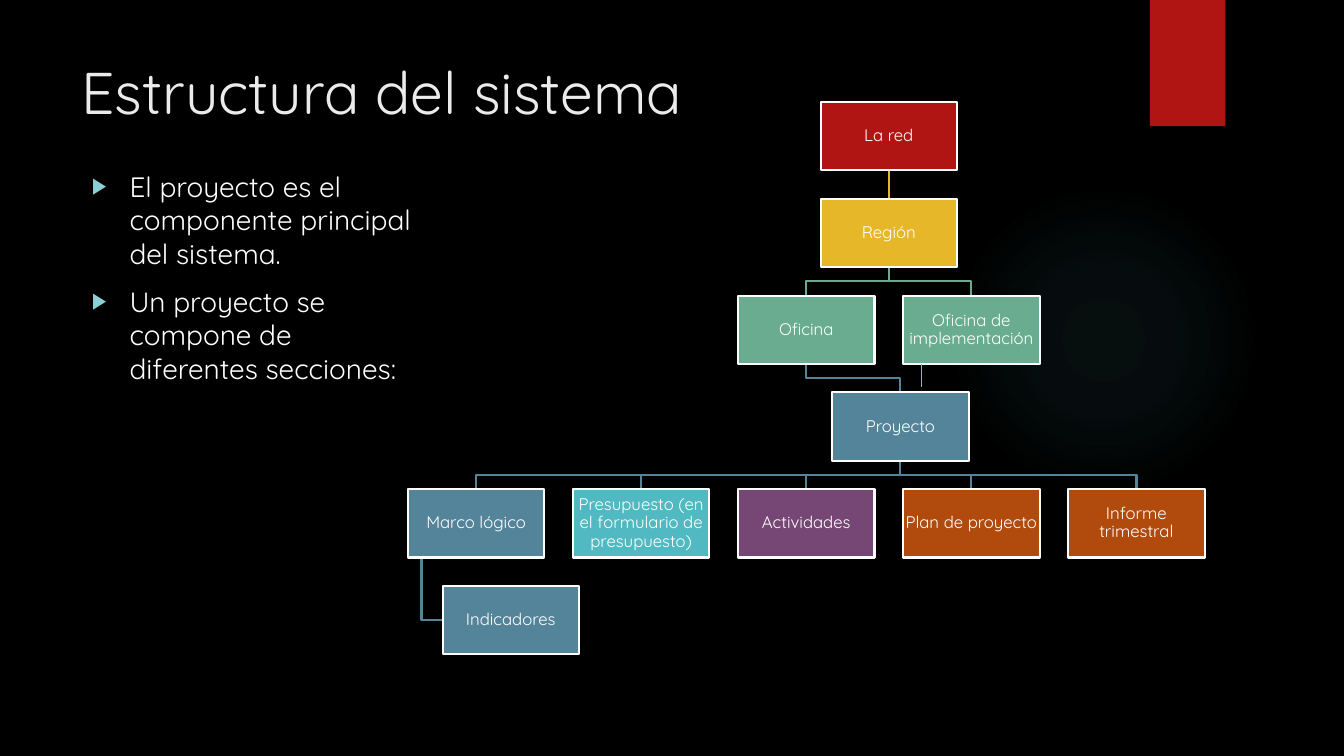
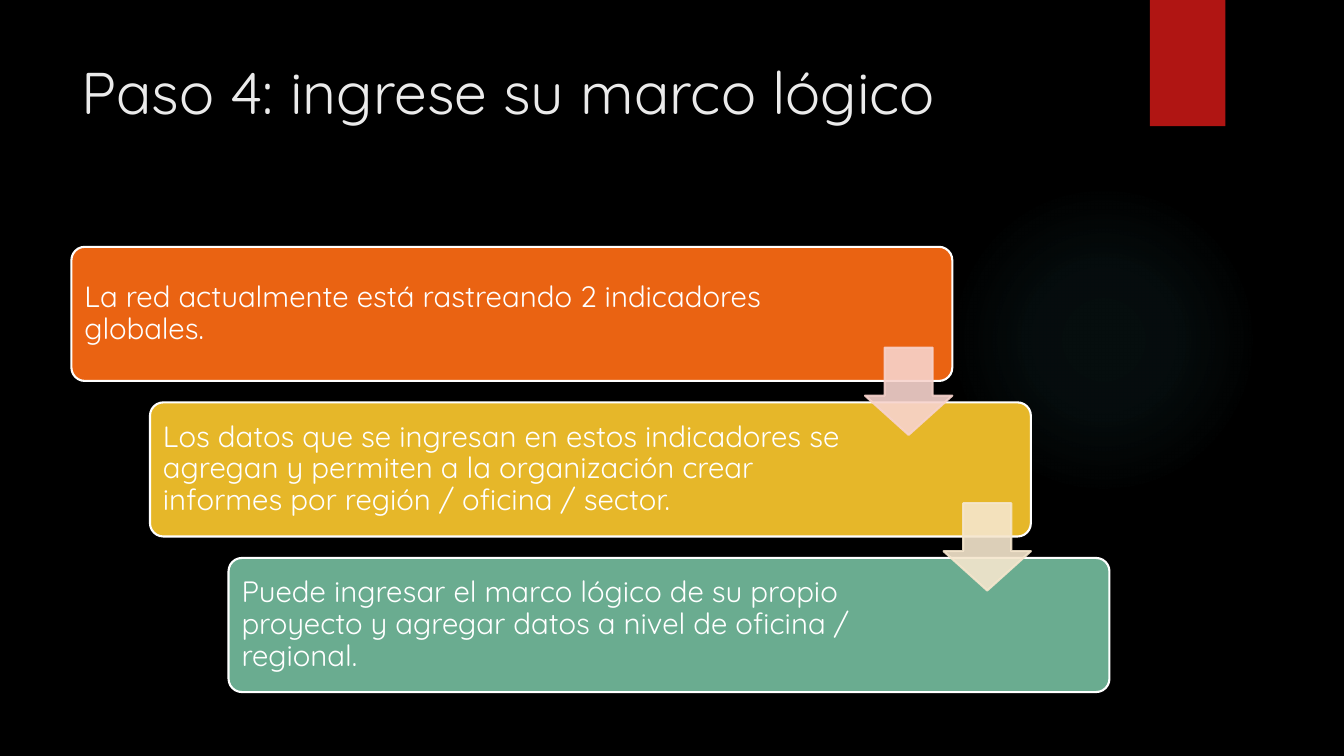
"""Build two slides on the structure of a project system and its logical framework."""
from lxml.etree import SubElement
from pptx import Presentation
from pptx.dml.color import RGBColor
from pptx.enum.shapes import MSO_CONNECTOR as Connector, MSO_SHAPE as Shape
from pptx.enum.text import MSO_ANCHOR as Anchor, MSO_AUTO_SIZE as AutoSize, PP_ALIGN as Align
from pptx.oxml import parse_xml
from pptx.oxml.ns import nsdecls, qn
from pptx.util import Cm, Pt

FONT = "Quicksand"
BLACK = RGBColor(0x00, 0x00, 0x00)
WHITE = RGBColor(0xFF, 0xFF, 0xFF)
TITLE_GREY = RGBColor(0xEB, 0xEB, 0xEB)
RED = RGBColor(0xB0, 0x15, 0x13)
YELLOW = RGBColor(0xE6, 0xB7, 0x29)
GREEN = RGBColor(0x6A, 0xAC, 0x90)
BLUE = RGBColor(0x54, 0x84, 0x9A)
PALE_BLUE = RGBColor(0x95, 0xB6, 0xC5)
TEAL = RGBColor(0x50, 0xB9, 0xC1)
BULLET_TEAL = RGBColor(0x8A, 0xD0, 0xD6)
PURPLE = RGBColor(0x76, 0x46, 0x74)
BROWN = RGBColor(0xB0, 0x4A, 0x0D)
ORANGE = RGBColor(0xEA, 0x63, 0x12)
PINK = RGBColor(0xF7, 0xD3, 0xCC)
CREAM = RGBColor(0xF5, 0xE6, 0xCD)

STRUCTURE_TITLE = "Estructura del sistema"
STRUCTURE_POINTS = [
    "El proyecto es el componente principal del sistema.",
    "Un proyecto se compone de diferentes secciones:",
]
UNITS = [
    ("La red", 2.5, 0, RED, None),
    ("Región", 2.5, 1, YELLOW, "La red"),
    ("Oficina", 2, 2, GREEN, "Región"),
    ("Oficina de implementación", 3, 2, GREEN, "Región"),
    ("Proyecto", 2.57, 3, BLUE, "Oficina"),
    ("Marco lógico", 0, 4, BLUE, "Proyecto"),
    ("Presupuesto (en el formulario de presupuesto)", 1, 4, TEAL, "Proyecto"),
    ("Actividades", 2, 4, PURPLE, "Proyecto"),
    ("Plan de proyecto", 3, 4, BROWN, "Proyecto"),
    ("Informe trimestral", 4, 4, BROWN, "Proyecto"),
    ("Indicadores", 0.21, 5, BLUE, "Marco lógico"),
]
LINK_COLORS = {1: YELLOW, 2: GREEN, 3: BLUE, 4: BLUE, 5: BLUE}
SIDE_LINKED = {"Indicadores"}

STEP_TITLE = "Paso 4: ingrese su marco lógico"
STEPS = [
    ("La red actualmente está rastreando 2 indicadores globales.", ORANGE, PINK),
    ("Los datos que se ingresan en estos indicadores se agregan y permiten a la "
     "organización crear informes por región / oficina / sector.", YELLOW, CREAM),
    ("Puede ingresar el marco lógico de su propio proyecto y agregar datos a nivel "
     "de oficina / regional.", GREEN, None),
]

UNIT_W, UNIT_H = 3.44, 1.72
UNIT_LEFT, UNIT_TOP = 10.28, 2.57
UNIT_DX, UNIT_DY = 4.16, 2.44
STEP_W, STEP_H = 22.2, 3.38
STEP_LEFT, STEP_TOP = 1.8, 6.22
STEP_DX, STEP_DY = 1.98, 3.92
ARROW_SIZE, ARROW_DROP = 2.2, 2.54

FRAME = dict(word_wrap=True, auto_size=AutoSize.NONE)
TOP_FRAME = dict(FRAME, vertical_anchor=Anchor.TOP)
UNIT_FRAME = dict(FRAME, vertical_anchor=Anchor.MIDDLE, margin_left=Cm(0.03),
                  margin_right=Cm(0.03), margin_top=Cm(0.03), margin_bottom=Cm(0.03))
STEP_FRAME = dict(FRAME, vertical_anchor=Anchor.MIDDLE, margin_left=Cm(0.23),
                  margin_right=Cm(4.37), margin_top=Cm(0.23), margin_bottom=Cm(0.23))
UNIT_PARA = dict(alignment=Align.CENTER, line_spacing=0.9)
STEP_PARA = dict(alignment=Align.LEFT, line_spacing=0.9)


def assign(target, values):
    for name, value in values.items():
        setattr(target, name, value)


def cm_box(*lengths):
    return [Cm(length) for length in lengths]


def set_font(paragraph, size, color=WHITE):
    assign(paragraph.font, dict(name=FONT, size=Pt(size), bold=False))
    paragraph.font.color.rgb = color


def set_line(drawn, color, width=1.5):
    drawn.line.color.rgb = color
    drawn.line.width = Pt(width)


def add_figure(slide, preset, box, fill, outline=None):
    figure = slide.shapes.add_shape(preset, *cm_box(*box))
    figure.shadow.inherit = False
    figure.fill.solid()
    figure.fill.fore_color.rgb = fill
    if outline is None:
        figure.line.fill.background()
    else:
        set_line(figure, outline)
    return figure


def write(figure, text, size, frame_values, para_values):
    frame = figure.text_frame
    assign(frame, frame_values)
    frame.text = text
    assign(frame.paragraphs[0], para_values)
    set_font(frame.paragraphs[0], size)


def add_straight(slide, start, end, color, width=1.5):
    line = slide.shapes.add_connector(Connector.STRAIGHT, *cm_box(*start, *end))
    set_line(line, color, width)
    SubElement(line.element.spPr, qn("a:effectLst"))


def add_bent(slide, points, color):
    start, *rest = [cm_box(*point) for point in points]
    builder = slide.shapes.build_freeform(*start)
    builder.add_line_segments(rest, close=False)
    bend = builder.convert_to_shape()
    bend.shadow.inherit = False
    bend.fill.background()
    set_line(bend, color)


def decorate_master(prs, slide):
    master = prs.slide_master
    master.background.fill.solid()
    master.background.fill.fore_color.rgb = BLACK
    glow = add_figure(slide, Shape.OVAL, (23.9, 4.65, 7.82, 7.82), TEAL)
    stops = "".join(
        f'<a:gs pos="{place * 1000}"><a:srgbClr val="{TEAL}">'
        f'<a:alpha val="{alpha * 1000}"/></a:srgbClr></a:gs>'
        for place, alpha in [(0, 7), (36, 6), (69, 0)])
    gradient = parse_xml(
        f'<a:gradFill {nsdecls("a")} rotWithShape="1"><a:gsLst>{stops}</a:gsLst>'
        '<a:path path="circle"><a:fillToRect l="50000" t="50000" r="50000" b="50000"/>'
        '</a:path></a:gradFill>')
    properties = glow.element.spPr
    properties.replace(properties.find(qn("a:solidFill")), gradient)
    ribbon = add_figure(slide, Shape.RECTANGLE, (28.98, 0, 1.9, 3.18), RED)
    for place, part in enumerate([glow, ribbon], start=2):
        master.shapes.element.insert(place, part.element)


def place(holder, *lengths):
    assign(holder, dict(zip(("left", "top", "width", "height"), cm_box(*lengths))))
    assign(holder.text_frame, TOP_FRAME)


def add_titled_slide(prs, layout_index, heading):
    slide = prs.slides.add_slide(prs.slide_layouts[layout_index])
    title = slide.shapes.title
    place(title, 1.8, 1.27, 26.14, 3.89)
    title.text_frame.text = heading
    paragraph = title.text_frame.paragraphs[0]
    paragraph.alignment = Align.LEFT
    set_font(paragraph, 42, TITLE_GREY)
    return slide


def fill_points(body, points):
    place(body, 2.06, 4.14, 8.61, 11.66)
    frame = body.text_frame
    frame.text = "\n".join(points)
    for number, paragraph in enumerate(frame.paragraphs):
        paragraph.space_before = Pt(10 if number else 0)
        properties = paragraph._p.get_or_add_pPr()
        properties.set("marL", str(Cm(0.95)))
        properties.set("indent", str(-Cm(0.95)))
        bullet_color = SubElement(properties, qn("a:buClr"))
        SubElement(bullet_color, qn("a:srgbClr"), val=str(BULLET_TEAL))
        SubElement(properties, qn("a:buSzPct"), val="80000")
        SubElement(properties, qn("a:buChar"), char="▶")
        set_font(paragraph, 20)


def link_units(slide, corners, name, row, parent):
    left, top = corners[name]
    parent_left, parent_top = corners[parent]
    parent_bottom = parent_top + UNIT_H
    color = LINK_COLORS[row]
    start = (parent_left + UNIT_W / 2, parent_bottom)
    end = (left + UNIT_W / 2, top)
    if name in SIDE_LINKED:
        trunk, middle = parent_left + UNIT_W / 10, top + UNIT_H / 2
        add_bent(slide, [(trunk, parent_bottom), (trunk, middle), (left, middle)], color)
    elif start[0] == end[0]:
        add_straight(slide, start, end, color)
    else:
        middle = (parent_bottom + top) / 2
        add_bent(slide, [start, (start[0], middle), (end[0], middle), end], color)


def draw_structure(slide):
    corners = {name: (UNIT_LEFT + column * UNIT_DX, UNIT_TOP + row * UNIT_DY)
               for name, column, row, _, _ in UNITS}
    for name, _, row, _, parent in UNITS:
        if parent:
            link_units(slide, corners, name, row, parent)
    for name, _, _, color, _ in UNITS:
        unit = add_figure(slide, Shape.RECTANGLE, (*corners[name], UNIT_W, UNIT_H),
                          color, WHITE)
        write(unit, name, 12, UNIT_FRAME, UNIT_PARA)
    office_bottom = corners["Oficina de implementación"][1] + UNIT_H
    add_straight(slide, (23.22, office_bottom + 0.58), (23.22, office_bottom),
                 PALE_BLUE, 0.75)


def draw_steps(slide):
    corners = [(STEP_LEFT + i * STEP_DX, STEP_TOP + i * STEP_DY)
               for i in range(len(STEPS))]
    for (left, top), (text, color, _) in zip(corners, STEPS):
        step = add_figure(slide, Shape.ROUNDED_RECTANGLE, (left, top, STEP_W, STEP_H),
                          color, WHITE)
        step.adjustments[0] = 0.1
        write(step, text, 21, STEP_FRAME, STEP_PARA)
    for (left, top), (_, _, tint) in zip(corners, STEPS):
        if tint is None:
            continue
        box = (left + STEP_W - ARROW_SIZE, top + ARROW_DROP, ARROW_SIZE, ARROW_SIZE)
        arrow = add_figure(slide, Shape.DOWN_ARROW, box, tint, tint)
        arrow.adjustments[0] = 0.55
        arrow.adjustments[1] = 0.45
        for tone in arrow.element.spPr.iter(qn("a:srgbClr")):
            SubElement(tone, qn("a:alpha"), val="90000")


def main():
    prs = Presentation()
    assign(prs, dict(slide_width=Cm(33.87), slide_height=Cm(19.05)))
    structure = add_titled_slide(prs, 1, STRUCTURE_TITLE)
    decorate_master(prs, structure)
    fill_points(structure.placeholders[1], STRUCTURE_POINTS)
    draw_structure(structure)
    draw_steps(add_titled_slide(prs, 5, STEP_TITLE))
    prs.save("out.pptx")


if __name__ == "__main__":
    main()
